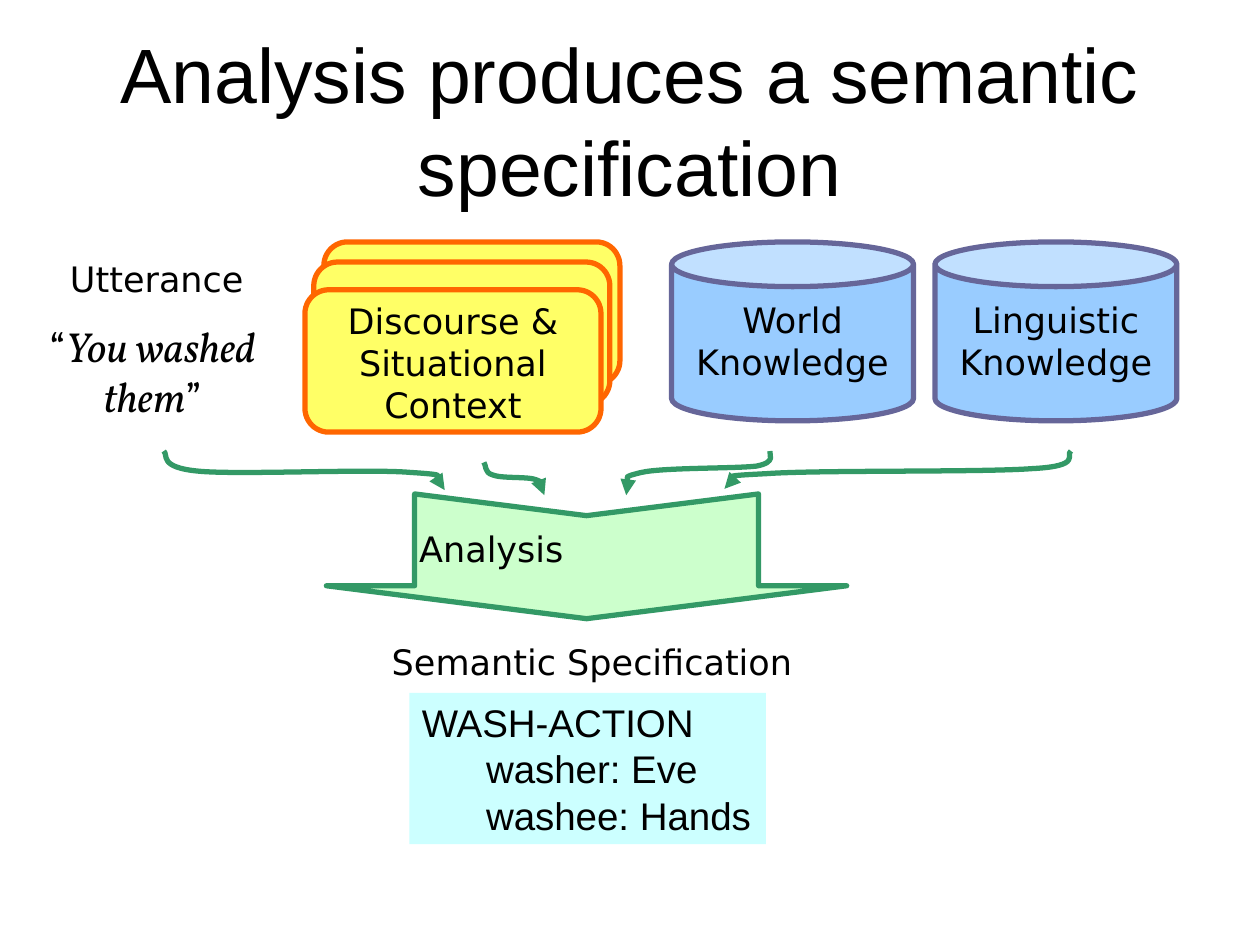
from typing import NamedTuple

from lxml.etree import SubElement
from pptx import Presentation
from pptx.dml.color import RGBColor
from pptx.enum.shapes import MSO_SHAPE as Shape
from pptx.enum.text import MSO_ANCHOR as Anchor, PP_ALIGN as Align
from pptx.oxml.ns import qn
from pptx.util import Inches, Pt

COLORS = {
    "text": "000000",
    "card": "FFFF66", "card_line": "FF6600",
    "store": "99CCFF", "store_line": "666699",
    "analysis": "CCFFCC", "analysis_line": "339966",
    "result": "CCFFFF",
}
SANS, SERIF, TITLE = "DejaVu Sans", "Vollkorn", "Arial"


class Box(NamedTuple):
    left: float
    top: float
    width: float
    height: float

    def lengths(self):
        return [Inches(v) for v in self]


class Label(NamedTuple):
    text: str
    box: Box
    inset_top: float = 0.04


class Store(NamedTuple):
    text: str
    left: float


class Flow(NamedTuple):
    """A start point followed by three control points for each curve."""
    points: list


LABELS = [
    Label("Utterance", Box(0.33, 2, 1.83, 0.44)),
    Label("Semantic Specification", Box(2.83, 5, 3.74, 0.42), 0.08),
    Label("Analysis", Box(3.2, 4.15, 1.4, 0.42)),
]
STORES = [Store("World Knowledge", 5.33), Store("Linguistic Knowledge", 7.42)]
CARDS = [Box(2.57, 1.92, 2.35, 1.13), Box(2.49, 2.08, 2.35, 1.13),
         Box(2.42, 2.3, 2.35, 1.13)]
FLOWS = [
    Flow([(8.5, 3.58), (8.45, 3.61), (8.6, 3.7), (8.19, 3.72), (7.79, 3.75),
          (6.48, 3.73), (6.08, 3.76), (5.67, 3.78), (5.82, 3.86), (5.75, 3.88)]),
    Flow([(1.3, 3.58), (1.34, 3.61), (1.25, 3.71), (1.58, 3.74), (1.9, 3.77),
          (2.93, 3.72), (3.26, 3.75), (3.58, 3.77), (3.47, 3.86), (3.53, 3.89)]),
    Flow([(6.11, 3.58), (6.1, 3.6), (6.17, 3.67), (6, 3.7), (5.82, 3.72),
          (5.26, 3.71), (5.09, 3.75), (4.92, 3.79), (4.99, 3.89), (4.97, 3.93)]),
    Flow([(3.84, 3.67), (3.86, 3.69), (3.84, 3.75), (3.91, 3.77), (3.98, 3.8),
          (4.2, 3.78), (4.26, 3.81), (4.33, 3.84), (4.31, 3.9), (4.32, 3.93)]),
]


def rgb(name: str) -> RGBColor:
    return RGBColor.from_string(COLORS[name])


def write(sp, paragraphs, *, font=SANS, size=20, align=Align.CENTER,
          anchor=Anchor.TOP, insets=(0.09, 0.04, 0.09, 0), indent=0):
    """Fill sp with paragraphs of (text, italic) runs; indent all but the first."""
    tf = sp.text_frame
    tf.word_wrap = True
    tf.vertical_anchor = anchor
    (tf.margin_left, tf.margin_top,
     tf.margin_right, tf.margin_bottom) = [Inches(v) for v in insets]
    for i, runs in enumerate(paragraphs):
        p = tf.add_paragraph() if i else tf.paragraphs[0]
        p.alignment = align
        if i and indent:
            p._p.get_or_add_pPr().set("marL", str(Inches(indent)))
        for text, italic in runs:
            r = p.add_run()
            r.text = text
            r.font.name, r.font.size, r.font.italic = font, Pt(size), italic
            r.font.color.rgb = rgb("text")


def plain(*lines: str):
    return [[(line, False)] for line in lines]


def set_line(sp, color: str):
    sp.line.color.rgb = rgb(color)
    sp.line.width = Pt(3)


def add_box(s, kind, box: Box, fill: str, line=None, adjustments=()):
    sp = s.shapes.add_shape(kind, *box.lengths())
    sp.shadow.inherit = False
    sp.fill.solid()
    sp.fill.fore_color.rgb = rgb(fill)
    if line:
        set_line(sp, line)
    else:
        sp.line.fill.background()
    for i, value in enumerate(adjustments):
        sp.adjustments[i] = value
    return sp


def add_text(s, box: Box, paragraphs, **style):
    write(s.shapes.add_textbox(*box.lengths()), paragraphs, **style)


def add_flow(s, flow: Flow):
    """Draw a curved arrow, turning each three line segments into one Bezier."""
    start, *rest = [(Inches(x), Inches(y)) for x, y in flow.points]
    builder = s.shapes.build_freeform(*start)
    builder.add_line_segments(rest, close=False)
    sp = builder.convert_to_shape()
    sp.shadow.inherit = False
    sp.fill.background()
    set_line(sp, "analysis_line")
    SubElement(sp.line._get_or_add_ln(), qn("a:tailEnd"), type="triangle")
    segments = list(sp._element.iter(qn("a:lnTo")))
    outline = segments[0].getparent()
    for i in range(0, len(segments), 3):
        curve = SubElement(outline, qn("a:cubicBezTo"))
        for segment in segments[i:i + 3]:
            curve.append(segment[0])
            outline.remove(segment)


def main():
    prs = Presentation()
    prs.slide_width, prs.slide_height = Inches(10), Inches(7.5)
    s = prs.slides.add_slide(prs.slide_layouts[6])

    add_text(s, Box(0.5, 0.3, 9, 1.25),
             plain("Analysis produces a semantic specification"),
             font=TITLE, size=44, anchor=Anchor.MIDDLE)

    for store in STORES:
        sp = add_box(s, Shape.CAN, Box(store.left, 1.92, 1.92, 1.42),
                     "store", "store_line", [0.25])
        write(sp, plain(store.text), insets=(0, 0.09, 0, 0))

    cards = [add_box(s, Shape.ROUNDED_RECTANGLE, box, "card", "card_line", [0.167])
             for box in CARDS]
    write(cards[-1], plain("Discourse & Situational Context"),
          insets=(0, 0.02, 0, 0))

    arrow = add_box(s, Shape.NOTCHED_RIGHT_ARROW, Box(4.16, 2.35, 0.99, 4.13),
                    "analysis", "analysis_line", [0.661, 0.264])
    arrow.rotation = 90
    for flow in FLOWS:
        add_flow(s, flow)

    for label in LABELS:
        add_text(s, label.box, plain(label.text),
                 insets=(0.09, label.inset_top, 0.09, 0))
    add_text(s, Box(0.17, 2.5, 2.08, 0.92),
             [[("“", False), ("You washed them", True), ("”", False)]],
             font=SERIF, size=24)

    result = add_box(s, Shape.RECTANGLE, Box(3.25, 5.5, 2.83, 1.2), "result")
    write(result, plain("WASH-ACTION", "washer: Eve", "washee: Hands"),
          font=TITLE, size=22, align=Align.LEFT,
          insets=(0.1, 0.05, 0.1, 0.05), indent=0.51)

    prs.save("out.pptx")


if __name__ == "__main__":
    main()
